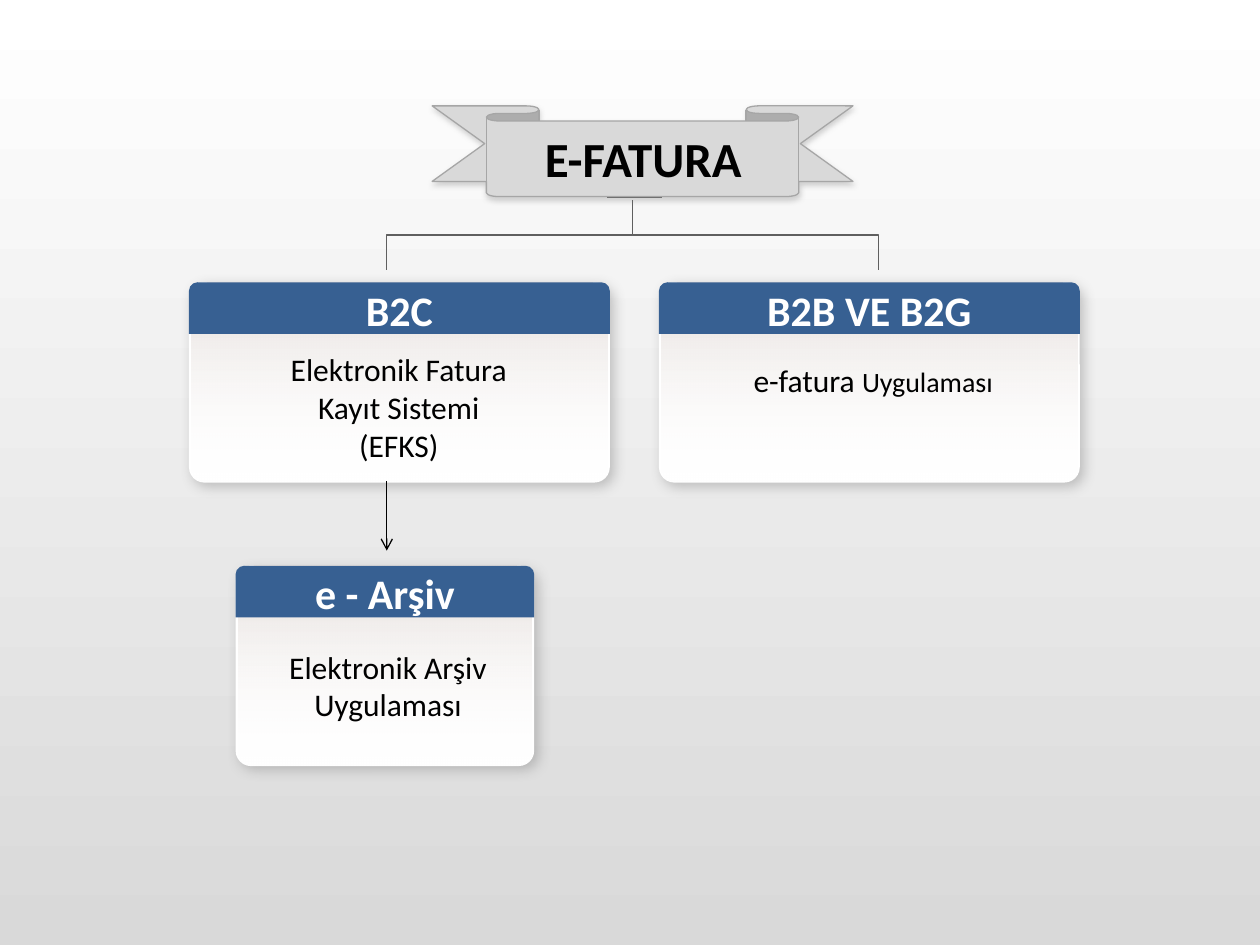
"""Draw the e-fatura tree: a ribbon title, two branches and an archive card."""
from dataclasses import dataclass

from lxml import etree
from pptx import Presentation
from pptx.dml.color import RGBColor
from pptx.enum.shapes import MSO_CONNECTOR, MSO_SHAPE
from pptx.enum.text import MSO_ANCHOR, PP_ALIGN
from pptx.oxml.ns import qn
from pptx.util import Inches, Pt

RIBBON, RECT = MSO_SHAPE.DOWN_RIBBON, MSO_SHAPE.RECTANGLE
ROUND, TAB = MSO_SHAPE.ROUNDED_RECTANGLE, MSO_SHAPE.ROUND_2_SAME_RECTANGLE
LINE, ELBOW = MSO_CONNECTOR.STRAIGHT, MSO_CONNECTOR.ELBOW
CENTER, MIDDLE = PP_ALIGN.CENTER, MSO_ANCHOR.MIDDLE

WIDE, HIGH = Inches(10), Inches(7.5)
COLS, ROWS = 100, 75
FONT = "Calibri"
INK = {
    "white": "FFFFFF", "black": "000000", "silver": "D9D9D9", "edge": "A6A6A6",
    "wire": "5F5F5F", "navy": "376092", "haze": "E5DEDB", "shade": "808080",
}


@dataclass(frozen=True)
class Box:
    x: float
    y: float
    w: float
    h: float


@dataclass(frozen=True)
class Shade:
    alpha: int
    blur: float
    dist: float
    turn: int


@dataclass(frozen=True)
class Run:
    text: str
    size: int = 18


@dataclass(frozen=True)
class Card:
    box: Box
    head: str
    note: Box
    lines: tuple[tuple[Run, ...], ...]
    wrap: bool = False


CARDS = (
    Card(Box(15, 22.4, 33.4, 15.9), "B2C", Box(22, 27.3, 19.3, 10.1),
         ((Run("Elektronik Fatura"),), (Run("Kayıt Sistemi"),), (Run("(EFKS)"),))),
    Card(Box(52.3, 22.4, 33.4, 15.9), "B2B VE B2G", Box(58.7, 28.2, 21.2, 4),
         ((Run("e-fatura "), Run("Uygulaması", 16)),)),
    Card(Box(18.7, 44.9, 23.7, 15.9), "e - Arşiv", Box(21.1, 50.9, 19.4, 7.1),
         ((Run("Elektronik Arşiv Uygulaması"),),), True),
)
SOFT = Shade(43, 7.5, 3, 45)
DROP = Shade(35, 3.1, 1.8, 90)
STEM, FEET = (50.2, 15.9), ((30.7, 21.4), (69.7, 21.4))


def tint(name: str) -> RGBColor:
    return RGBColor.from_string(INK[name])


def spot(x: float, y: float) -> tuple[int, int]:
    return round(x * WIDE / COLS), round(y * HIGH / ROWS)


def blend(fill, top: str, base: str) -> None:
    fill.gradient()
    fill.gradient_angle = 270
    for stop, name in zip(fill.gradient_stops, (top, base)):
        stop.color.rgb = tint(name)


def block(slide, kind, box: Box, fill: str, adj: tuple = (), edge: str = ""):
    item = slide.shapes.add_shape(kind, *spot(box.x, box.y), *spot(box.w, box.h))
    item.fill.solid()
    item.fill.fore_color.rgb = tint(fill)
    if edge:
        item.line.color.rgb = tint(edge)
        item.line.width = Pt(0.75)
    else:
        item.line.fill.background()
    item.shadow.inherit = False
    for spot_no, share in enumerate(adj):
        item.adjustments[spot_no] = share
    return item


def cast(item, shade: Shade) -> None:
    list_ = item._element.spPr.find(qn("a:effectLst"))
    outer = etree.SubElement(
        list_, qn("a:outerShdw"), blurRad=str(Pt(shade.blur)),
        dist=str(Pt(shade.dist)), dir=str(shade.turn * 60000), rotWithShape="0")
    color = etree.SubElement(outer, qn("a:srgbClr"), val=INK["shade"])
    etree.SubElement(color, qn("a:alpha"), val=str(shade.alpha * 1000))


def write(item, lines, color: str, bold: bool = False, wrap: bool = True) -> None:
    frame = item.text_frame
    frame.word_wrap = wrap
    for row, runs in enumerate(lines):
        para = frame.add_paragraph() if row else frame.paragraphs[0]
        para.alignment = CENTER
        para.font.name, para.font.bold = FONT, bold
        para.font.size = Pt(runs[0].size)
        para.font.color.rgb = tint(color)
        for part in runs:
            run = para.add_run()
            run.text = part.text
            if part.size != runs[0].size:
                run.font.size = Pt(part.size)


def wire(slide, kind, start: tuple, end: tuple, color: str):
    link = slide.shapes.add_connector(kind, *spot(*start), *spot(*end))
    link.line.color.rgb = tint(color)
    link.line.width = Pt(0.75)
    etree.SubElement(link._element.spPr, qn("a:effectLst"))
    return link


def branch(slide, stem: tuple, foot: tuple) -> None:
    mid_x, mid_y = (stem[0] + foot[0]) / 2, (stem[1] + foot[1]) / 2
    side = 1 if foot[0] < stem[0] else -1
    half, reach = side * (foot[1] - stem[1]) / 2, abs(foot[0] - stem[0]) / 2
    link = wire(slide, ELBOW, (mid_x - half, mid_y - reach),
                (mid_x + half, mid_y + reach), "wire")
    turn = 90 if side > 0 else 270
    link._element.spPr.find(qn("a:xfrm")).set("rot", str(turn * 60000))


def title(slide) -> None:
    band = block(slide, RIBBON, Box(34.3, 8.4, 33.4, 7.2), "silver",
                 (0.167, 0.742), "edge")
    cast(band, DROP)
    label = block(slide, RECT, Box(42.1, 9.7, 17.9, 5.7), "silver")
    write(label, ((Run("E-FATURA", 28),),), "black", True, False)


def panel(slide, card: Card) -> None:
    box = card.box
    cast(block(slide, ROUND, box, "white", (0.077,)), SOFT)
    inner = Box(box.x + 0.2, box.y, box.w - 0.4, box.h)
    glow = block(slide, ROUND, inner, "white", (0.077,))
    blend(glow.fill, "haze", "white")
    last = glow._element.xpath(".//a:gs[last()]/a:srgbClr")[0]
    etree.SubElement(last, qn("a:alpha"), val="0")
    head = block(slide, TAB, Box(box.x, box.y, box.w, 4.1), "navy")
    head.text_frame.vertical_anchor = MIDDLE
    write(head, ((Run(card.head, 24),),), "white", True)
    note = card.note
    text = slide.shapes.add_textbox(*spot(note.x, note.y), *spot(note.w, note.h))
    write(text, card.lines, "black", wrap=card.wrap)


def main() -> None:
    deck = Presentation()
    deck.slide_width, deck.slide_height = WIDE, HIGH
    slide = deck.slides.add_slide(deck.slide_layouts[6])
    blend(slide.background.fill, "white", "silver")
    for foot in FEET:
        branch(slide, STEM, foot)
    wire(slide, LINE, (48.2, 15.7), (52.5, 15.7), "wire")
    title(slide)
    for card in CARDS:
        panel(slide, card)
    arrow = wire(slide, LINE, (30.7, 38.2), (30.7, 43.7), "black")
    etree.SubElement(arrow.line._get_or_add_ln(), qn("a:tailEnd"), type="arrow")
    deck.save("out.pptx")


if __name__ == "__main__":
    main()
